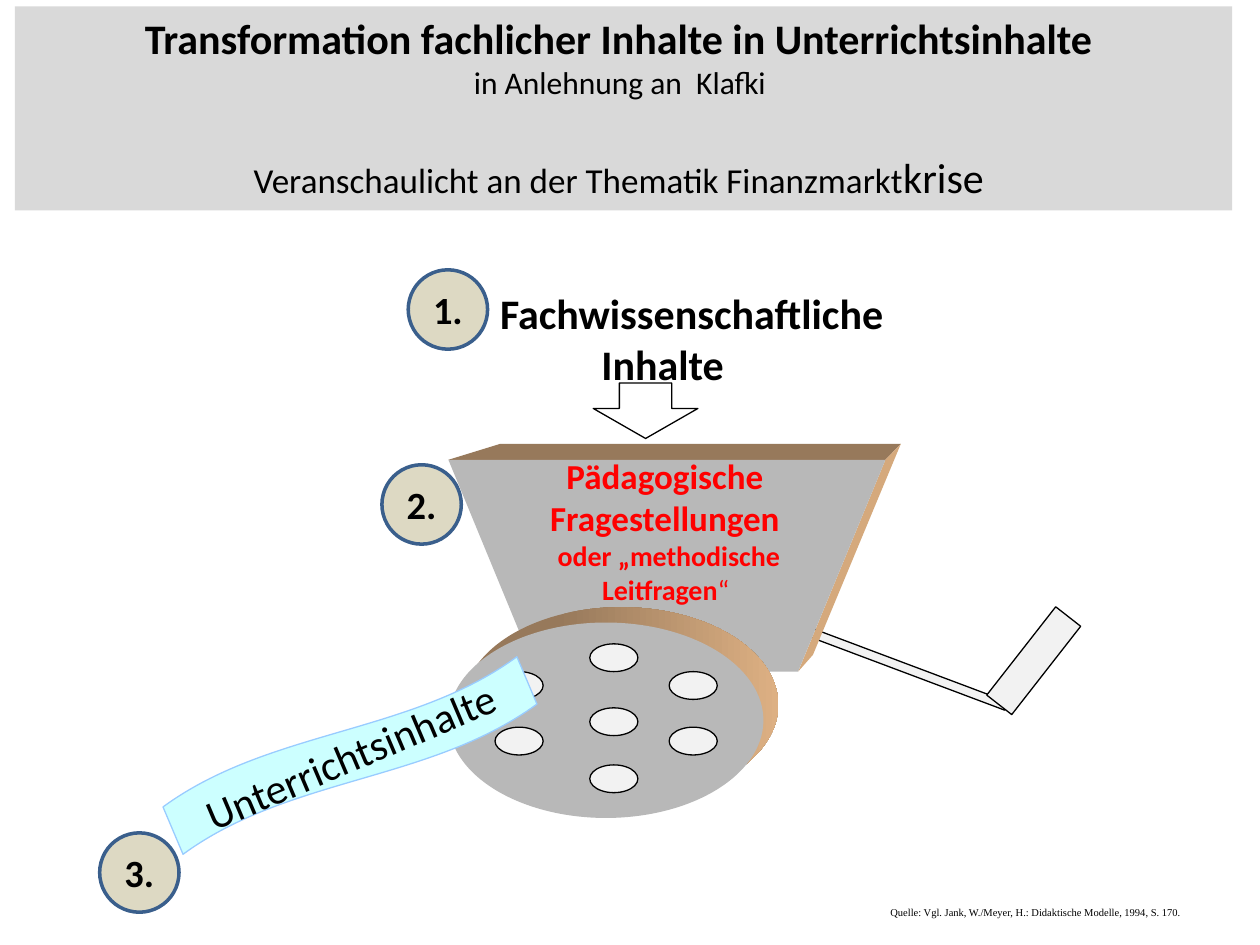
from pptx import Presentation
from pptx.dml.color import RGBColor
from pptx.enum.shapes import MSO_SHAPE
from pptx.enum.text import MSO_ANCHOR, PP_ALIGN
from pptx.util import Cm, Pt

OVAL = MSO_SHAPE.OVAL
RECTANGLE = MSO_SHAPE.RECTANGLE
HOPPER = MSO_SHAPE.FLOWCHART_MANUAL_OPERATION
DOWN_ARROW = MSO_SHAPE.DOWN_ARROW
WAVE = MSO_SHAPE.WAVE
TOP, MIDDLE = MSO_ANCHOR.TOP, MSO_ANCHOR.MIDDLE
LEFT, CENTER = PP_ALIGN.LEFT, PP_ALIGN.CENTER

BLACK, WHITE, RED = "000000", "FFFFFF", "FF0000"
LIGHT, METAL = "F2F2F2", "B8B8B8"
BROWN, TAN = "97795B", "D5A97C"


def color(value):
    return RGBColor.from_string(value)


class MincerSlide:
    font = "Calibri"

    def __init__(self, presentation):
        self.slide = presentation.slides.add_slide(presentation.slide_layouts[5])
        self.shapes = self.slide.shapes

    def paint(self, shape, fill, line=None, width=0.75):
        shape.shadow.inherit = False
        shape.fill.solid()
        shape.fill.fore_color.rgb = color(fill)
        if line:
            shape.line.color.rgb = color(line)
            shape.line.width = Pt(width)
        else:
            shape.line.fill.background()
        return shape

    def shape(self, kind, box, fill, line=None, width=0.75, rotation=0):
        shape = self.shapes.add_shape(kind, *map(Cm, box))
        shape.rotation = rotation
        return self.paint(shape, fill, line, width)

    def polygon(self, points, fill):
        corners = [(Cm(x), Cm(y)) for x, y in points]
        builder = self.shapes.build_freeform(*corners[0])
        builder.add_line_segments(corners[1:], close=True)
        return self.paint(builder.convert_to_shape(), fill)

    def label(self, shape, lines, ink=BLACK, align=CENTER, anchor=TOP, wrap=True, font=None):
        """Each line is a list of (text, size, bold) runs; \\v breaks a line."""
        frame = shape.text_frame
        frame.word_wrap = wrap
        frame.vertical_anchor = anchor
        for index, runs in enumerate(lines):
            paragraph = frame.add_paragraph() if index else frame.paragraphs[0]
            paragraph.alignment = align
            for text, size, bold in runs:
                for part_index, part in enumerate(text.split("\v")):
                    if part_index:
                        paragraph.add_line_break()
                    run = paragraph.add_run()
                    run.text = part
                    run.font.name = font or self.font
                    run.font.size = Pt(size)
                    run.font.bold = bold
                    run.font.color.rgb = color(ink)
        return frame

    def text(self, box, lines, **style):
        return self.label(self.shapes.add_textbox(*map(Cm, box)), lines, **style)

    def title(self, box, lines):
        title = self.shapes.title
        title.left, title.top, title.width, title.height = map(Cm, box)
        title.fill.solid()
        title.fill.fore_color.rgb = color("D9D9D9")
        return self.label(title, lines)

    def step(self, number, left, top):
        circle = self.shape(OVAL, (left, top, 1.6, 1.6), "DDD9C3", "3A5F8C", 2)
        self.label(circle, [[(f"{number}.", 22, True)]], anchor=MIDDLE, wrap=False)

    def mincer(self):
        self.shape(RECTANGLE, (14.43, 13.08, 6.05, 0.18), LIGHT, BLACK, rotation=20.6)
        self.polygon([(9.04, 9.27), (10.08, 8.95), (18.16, 8.95), (17.85, 9.27)], BROWN)
        self.polygon([(17.85, 9.27), (18.16, 8.95), (16.39, 13.2), (16.09, 13.54)], TAN)
        self.shape(HOPPER, (9.04, 9.27, 8.81, 4.27), METAL)

        rim = self.shape(OVAL, (9.34, 12.24, 6.35, 3.94), TAN)
        rim.fill.gradient()
        rim.fill.gradient_angle = 0
        for stop, shade, position in zip(rim.fill.gradient_stops, (BROWN, "DDB083"), (0.3, 1)):
            stop.color.rgb = color(shade)
            stop.position = position
        self.shape(OVAL, (9.04, 12.55, 6.35, 3.94), METAL)

        hole_columns = {9.98: (13.54, 14.66), 11.89: (12.98, 14.27, 15.42), 13.49: (13.54, 14.66)}
        for left, tops in hole_columns.items():
            for top in tops:
                self.shape(OVAL, (left, top, 0.97, 0.56), LIGHT, BLACK)
        self.shape(RECTANGLE, (19.71, 13, 2.26, 0.64), LIGHT, BLACK, rotation=308)


def main():
    presentation = Presentation()
    presentation.slide_width, presentation.slide_height = Cm(25.4), Cm(19.05)
    page = MincerSlide(presentation)

    heading = page.title((0.3, 0.13, 24.54, 4.11), [
        [("Transformation fachlicher Inhalte in Unterrichtsinhalte ", 24, True)],
        [("in Anlehnung an  Klafki ", 18, False)],
        [("Veranschaulicht an der Thematik Finanzmarkt", 20, False), ("krise ", 24, False)],
    ])
    for paragraph in heading.paragraphs:
        paragraph.space_before = Pt(0)
    heading.paragraphs[-1].space_before = Pt(29)

    for number, (left, top) in enumerate([(8.23, 5.44), (7.7, 9.37), (2.01, 16.79)], 1):
        page.step(number, left, top)
    page.mincer()

    contents = page.text((8.56, 5.68, 9.6, 2.31), [
        [("Fachwissenschaftliche", 24, True)],
        [("Inhalte", 24, True)],
    ])
    contents.margin_left = contents.margin_right = 0
    # The first line is centred in the space right of the step number.
    contents.paragraphs[0]._p.get_or_add_pPr().set("marL", str(Cm(1.17)))
    arrow = page.shape(DOWN_ARROW, (11.96, 7.72, 2.11, 1.12), WHITE, BLACK)
    arrow.adjustments[1] = 0.54

    page.text((10.82, 9.04, 5.33, 3.33), [
        [("Pädagogische \vFragestellungen ", 20, True)],
        [("oder „methodische", 16, True)],
        [("Leitfragen", 16, True), ("“ ", 16, False)],
    ], ink=RED, wrap=False)

    banner = page.shape(WAVE, (3.18, 14.53, 7.75, 1.4), "CCFFFF", "99CCFF", rotation=337)
    banner.adjustments[0] = 0.13
    page.label(banner, [[("Unterrichtsinhalte", 24, False)]], anchor=MIDDLE, wrap=False)

    page.text((17.7, 18.14, 7.32, 0.51), [
        [("Quelle: Vgl. Jank, W./Meyer, H.: Didaktische Modelle, 1994, S. 170.", 6, False)],
    ], align=LEFT, font="Times New Roman")

    presentation.save("out.pptx")


if __name__ == "__main__":
    main()
